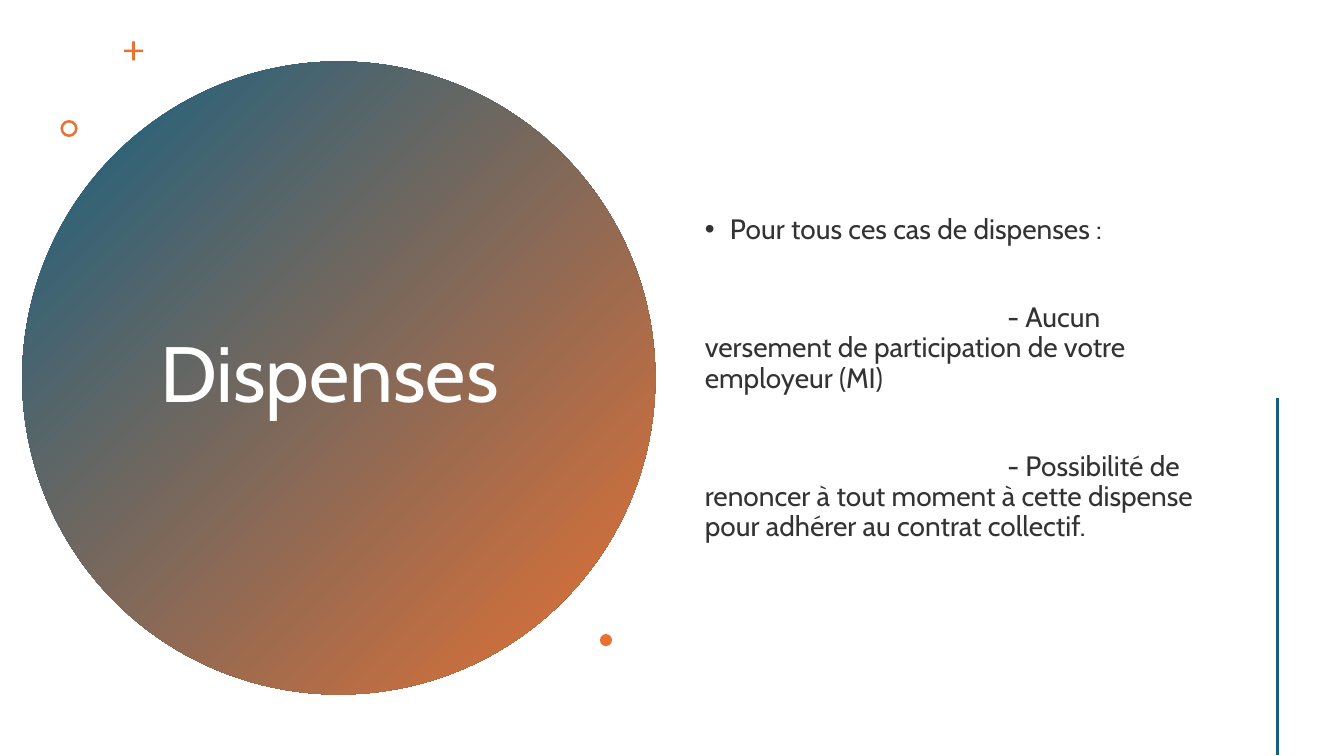
from dataclasses import dataclass

from lxml import etree
from pptx import Presentation
from pptx.dml.color import RGBColor
from pptx.enum.shapes import MSO_CONNECTOR, MSO_SHAPE
from pptx.enum.text import MSO_ANCHOR, MSO_AUTO_SIZE, PP_ALIGN
from pptx.oxml.ns import qn
from pptx.util import Inches, Pt

OVAL, DONUT, CROSS = MSO_SHAPE.OVAL, MSO_SHAPE.DONUT, MSO_SHAPE.CROSS
STRAIGHT = MSO_CONNECTOR.STRAIGHT
MIDDLE = MSO_ANCHOR.MIDDLE
NO_FIT = MSO_AUTO_SIZE.NONE
LEFT, CENTER = PP_ALIGN.LEFT, PP_ALIGN.CENTER


@dataclass(frozen=True)
class Theme:
    font: str = "Cabin"
    blue: RGBColor = RGBColor(0x15, 0x60, 0x82)
    orange: RGBColor = RGBColor(0xE9, 0x71, 0x32)
    white: RGBColor = RGBColor(0xFF, 0xFF, 0xFF)
    text: RGBColor = RGBColor(0x33, 0x33, 0x33)
    title_size: int = 56
    body_size: int = 20


THEME = Theme()

INTRO = "Pour tous ces cas de dispenses :"
POINTS = (
    "- Aucun versement de participation de votre employeur (MI)",
    "- Possibilité de renoncer à tout moment à cette dispense "
    "pour adhérer au contrat collectif.",
)


def add_plain_shape(s, kind, x, y, size, adjust=None):
    sp = s.shapes.add_shape(kind, Inches(x), Inches(y), Inches(size), Inches(size))
    sp.shadow.inherit = False
    sp.line.fill.background()
    sp.fill.solid()
    sp.fill.fore_color.rgb = THEME.orange
    if adjust is not None:
        sp.adjustments[0] = adjust
    return sp


def add_gradient_disc(s, x, y, size):
    fill = add_plain_shape(s, OVAL, x, y, size).fill
    fill.gradient()
    fill.gradient_angle = 315
    for stop, position, color in zip(fill.gradient_stops, (0, 1), (THEME.blue, THEME.orange)):
        stop.position = position
        stop.color.rgb = color


def add_rule(s, x, top, bottom):
    line = s.shapes.add_connector(STRAIGHT, Inches(x), Inches(top), Inches(x), Inches(bottom))
    line.line.color.rgb = THEME.blue
    line.line.width = Pt(2)
    etree.SubElement(line._element.spPr, qn("a:effectLst"))


def place(sp, x, y, w, h):
    sp.left, sp.top, sp.width, sp.height = Inches(x), Inches(y), Inches(w), Inches(h)
    tf = sp.text_frame
    tf.word_wrap = True
    tf.auto_size = NO_FIT
    tf.vertical_anchor = MIDDLE
    return tf


def write(p, text, size, color, align, before=0):
    p.alignment = align
    p.line_spacing = 0.9
    p.space_before = Pt(before)
    r = p.add_run()
    r.text = text
    r.font.name = THEME.font
    r.font.size = Pt(size)
    r.font.color.rgb = color


def set_indent(p, margin, first, bullet=None):
    pPr = p._p.get_or_add_pPr()
    pPr.set("marL", str(Inches(margin)))
    pPr.set("indent", str(Inches(first)))
    if bullet:
        etree.SubElement(pPr, qn("a:buFont"), typeface="Arial")
        etree.SubElement(pPr, qn("a:buChar"), char=bullet)
    else:
        etree.SubElement(pPr, qn("a:buNone"))


def fill_body(tf):
    p = tf.paragraphs[0]
    write(p, INTRO, THEME.body_size, THEME.text, LEFT, 10)
    set_indent(p, 0.25, -0.25, "•")
    # Each point starts well to the right, then wraps to the margin
    for point in POINTS:
        p = tf.add_paragraph()
        write(p, point, THEME.body_size, THEME.text, LEFT, 41.5)
        set_indent(p, 0, 3)


def main():
    prs = Presentation()
    prs.slide_width, prs.slide_height = Inches(13.33), Inches(7.5)
    s = prs.slides.add_slide(prs.slide_layouts[1])

    # Disc behind the title
    add_gradient_disc(s, 0.22, 0.61, 6.28)

    # Title, brought in front of the disc
    title = s.shapes.title
    s.shapes._spTree.append(title._element)
    tf = place(title, 1.36, 1.41, 3.99, 4.67)
    write(tf.paragraphs[0], "Dispenses ", THEME.title_size, THEME.white, CENTER)

    # Small accents around the disc
    add_plain_shape(s, CROSS, 1.23, 0.41, 0.19, 0.43)
    add_plain_shape(s, DONUT, 0.6, 1.19, 0.17, 0.15)
    add_plain_shape(s, OVAL, 5.95, 6.29, 0.12)

    # Body text
    fill_body(place(s.placeholders[1], 6.89, 0.57, 5.22, 6.38))

    # Vertical rule at the right
    add_rule(s, 12.67, 3.95, 7.49)

    prs.save("out.pptx")


if __name__ == "__main__":
    main()
